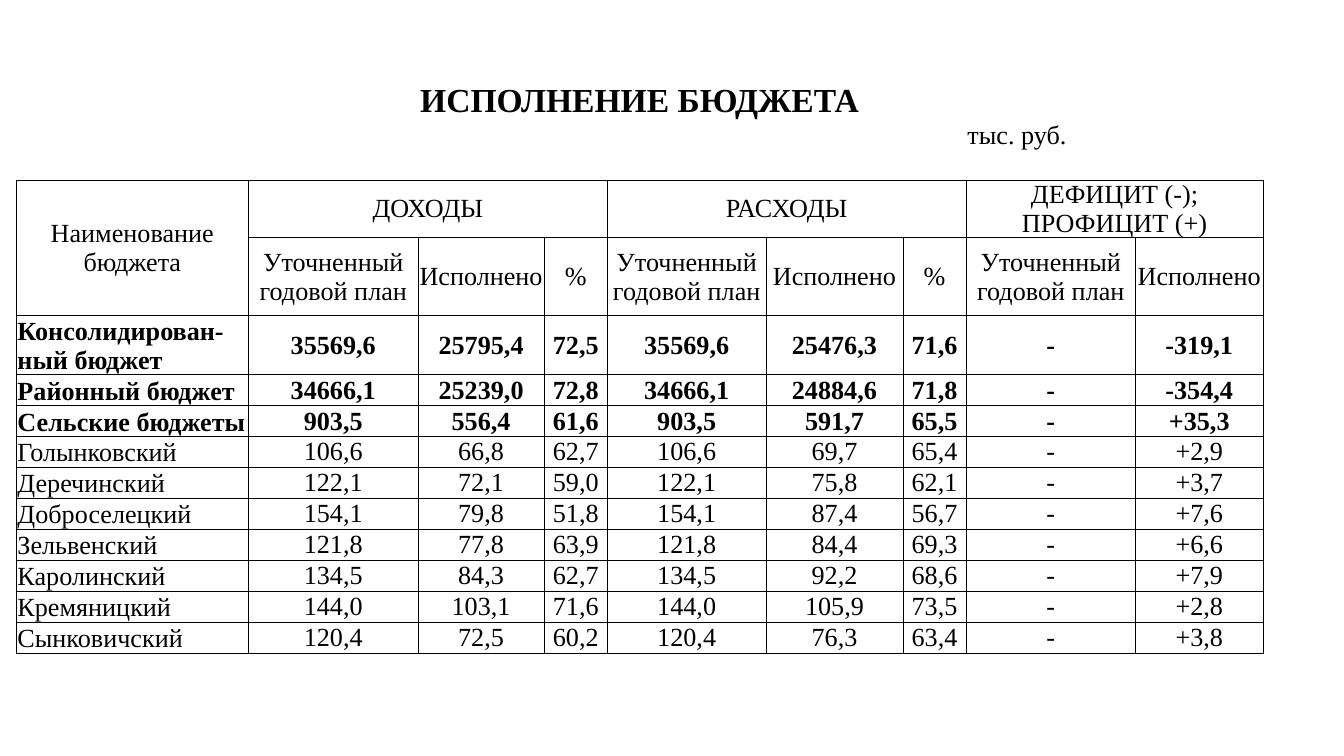
from pptx import Presentation
from pptx.dml.color import RGBColor
from pptx.enum.text import MSO_ANCHOR, PP_ALIGN
from pptx.oxml import parse_xml
from pptx.oxml.ns import nsdecls, qn
from pptx.util import Inches, Pt

BLACK = "000000"
WIDTHS = [1.73, 1.01, 0.25, 0.65, 0.29, 0.47, 1.18, 0.21, 0.81, 0.09, 0.38, 1.26, 0.52, 0.43]
HEIGHTS = [0.29, 0.44, 0.43, 0.58, 0.44] + [0.23] * 9
TITLE = [(0, 14, "ИСПОЛНЕНИЕ БЮДЖЕТА")]
UNIT = [(2, 2, ""), (4, 2, ""), (6, 2, ""), (8, 2, ""), (11, 2, "тыс. руб.")]
GROUPS = [(1, 5, "ДОХОДЫ"), (6, 5, "РАСХОДЫ"), (11, 3, "ДЕФИЦИТ (-); ПРОФИЦИТ (+)")]
SPANS = [(0, 1), (1, 2), (3, 2), (5, 1), (6, 1), (7, 2), (9, 2), (11, 1), (12, 2)]
PLAN, DONE = "Уточненный годовой план", "Исполнено"
HEADS = ["", PLAN, DONE, "%", PLAN, DONE, "%", PLAN, DONE]
BUDGETS = [
    ("Консолидирован-ный бюджет", "35569,6", "25795,4", "72,5", "35569,6", "25476,3", "71,6", "-", "-319,1"),
    ("Районный бюджет", "34666,1", "25239,0", "72,8", "34666,1", "24884,6", "71,8", "-", "-354,4"),
    ("Сельские бюджеты", "903,5", "556,4", "61,6", "903,5", "591,7", "65,5", "-", "+35,3"),
    ("Голынковский", "106,6", "66,8", "62,7", "106,6", "69,7", "65,4", "-", "+2,9"),
    ("Деречинский", "122,1", "72,1", "59,0", "122,1", "75,8", "62,1", "-", "+3,7"),
    ("Доброселецкий", "154,1", "79,8", "51,8", "154,1", "87,4", "56,7", "-", "+7,6"),
    ("Зельвенский", "121,8", "77,8", "63,9", "121,8", "84,4", "69,3", "-", "+6,6"),
    ("Каролинский", "134,5", "84,3", "62,7", "134,5", "92,2", "68,6", "-", "+7,9"),
    ("Кремяницкий", "144,0", "103,1", "71,6", "144,0", "105,9", "73,5", "-", "+2,8"),
    ("Сынковичский", "120,4", "72,5", "60,2", "120,4", "76,3", "63,4", "-", "+3,8"),
]


def paint(value):
    return RGBColor.from_string(value)


def border(cell, sides):
    props = cell._tc.get_or_add_tcPr()
    for place, side in enumerate("LRTB"):
        fill = (f'<a:solidFill><a:srgbClr val="{BLACK}"/></a:solidFill>'
                if side in sides else "<a:noFill/>")
        line = parse_xml(f'<a:ln{side} {nsdecls("a")} w="{Pt(0.5)}">{fill}</a:ln{side}>')
        props.insert(place, line)


def style(cell, sides):
    looks = {"margin_left": Inches(0.01), "margin_right": Inches(0.01),
             "margin_top": 0, "margin_bottom": 0}
    for name, value in looks.items():
        setattr(cell, name, value)
    cell.fill.background()
    border(cell, sides)


def write(cell, text, size=14, bold=False, align=PP_ALIGN.CENTER, anchor=MSO_ANCHOR.MIDDLE):
    cell.text = text
    cell.vertical_anchor = anchor
    looks = {"name": "Times New Roman", "size": Pt(size), "bold": bold}
    for para in cell.text_frame.paragraphs:
        para.alignment = align
        for run in para.runs:
            for name, value in looks.items():
                setattr(run.font, name, value)
            run.font.color.rgb = paint(BLACK)


def fill_row(table, row, items, **looks):
    for col, span, text in items:
        cell = table.cell(row, col)
        if span > 1:
            cell.merge(table.cell(row, col + span - 1))
        if text:
            write(cell, text, **looks)


def add_budget(slide, left, top):
    frame = slide.shapes.add_table(
        len(HEIGHTS), len(WIDTHS), Inches(left), Inches(top),
        Inches(sum(WIDTHS)), Inches(sum(HEIGHTS)))
    table = frame.table
    table.first_row = table.horz_banding = False
    props = table._tbl.tblPr
    props.find(qn("a:tableStyleId")).text = "{2D5ABB26-0587-4C30-8999-92F81FD0307C}"
    for col, width in zip(table.columns, WIDTHS):
        col.width = Inches(width)
    for num, (row, height) in enumerate(zip(table.rows, HEIGHTS)):
        row.height = Inches(height)
        for cell in row.cells:
            style(cell, ["", "B"][num] if num < 2 else "LRTB")

    fill_row(table, 0, TITLE, size=18, bold=True)
    fill_row(table, 1, UNIT, align=PP_ALIGN.LEFT, anchor=MSO_ANCHOR.TOP)
    fill_row(table, 2, GROUPS)
    fill_row(table, 3, [(*span, text) for span, text in zip(SPANS, HEADS)])
    table.cell(2, 0).merge(table.cell(3, 0))
    write(table.cell(2, 0), "Наименование\nбюджета")
    for num, (name, *values) in enumerate(BUDGETS):
        row, bold = num + 4, num < 3
        write(table.cell(row, 0), name, bold=bold, align=PP_ALIGN.LEFT, anchor=MSO_ANCHOR.BOTTOM)
        fill_row(table, row, [(*span, text) for span, text in zip(SPANS[1:], values)], bold=bold)


deck = Presentation()
deck.slide_width = Inches(10)
deck.slide_height = deck.slide_width * 9 // 16
page = deck.slides.add_slide(deck.slide_layouts[6])
add_budget(page, 0.12, 0.61)
deck.save("out.pptx")
